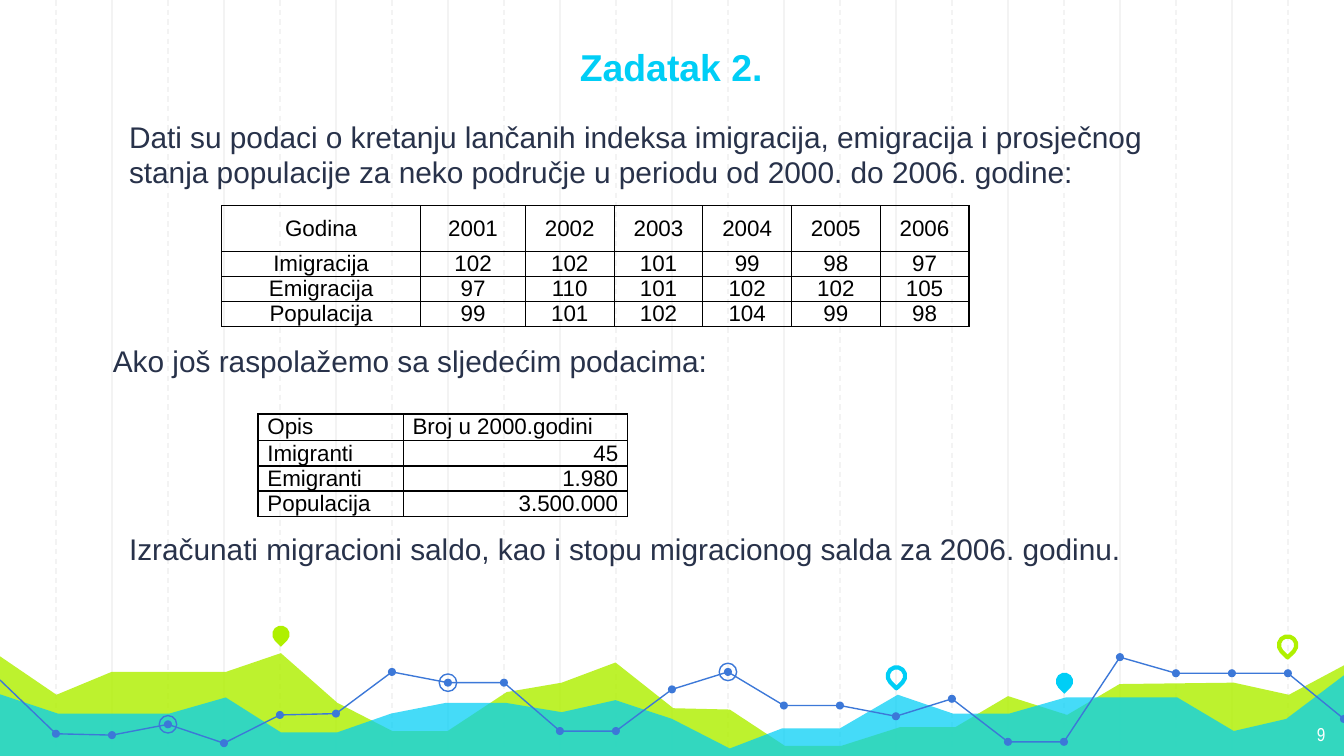
from lxml import etree
from pptx import Presentation
from pptx.dml.color import RGBColor
from pptx.enum import dml, shapes, text
from pptx.oxml import ns, parse_xml
from pptx.util import Inches, Pt

HUES = {"grid": "F3F3F3", "lime": "AFF000", "cyan": "00CEF6", "blue": "3C78D8",
        "ink": "28324A", "black": "000000", "white": "FFFFFF"}
LEFT, MID, RIGHT = text.PP_ALIGN.LEFT, text.PP_ALIGN.CENTER, text.PP_ALIGN.RIGHT
OVAL, DROP = shapes.MSO_SHAPE.OVAL, shapes.MSO_SHAPE.TEAR


def style(shape, fill=None, line=None, width=0.75):
    shape.shadow.inherit = False
    if fill:
        shape.fill.solid()
        shape.fill.fore_color.rgb = RGBColor.from_string(HUES[fill])
    else:
        shape.fill.background()
    if line:
        shape.line.color.rgb = RGBColor.from_string(HUES[line])
        shape.line.width = Pt(width)
    else:
        shape.line.fill.background()


def write(par, words, size, hue, align=LEFT, face="Arial", bold=False):
    par.text = words
    par.alignment = align
    font = par.font
    font.name, font.size, font.bold = face, Pt(size), bold
    font.color.rgb = RGBColor.from_string(HUES[hue])


# A 16:9 slide
prs = Presentation()
prs.slide_width = Inches(10)
prs.slide_height = Inches(10 * 9 / 16)
slide = prs.slides.add_slide(prs.slide_layouts[1])
draw = slide.shapes
step = 5 / 12

# Vertical grid: every other line is dashed
for i in range(1, 24):
    x = Inches(i * step)
    rule = draw.add_connector(shapes.MSO_CONNECTOR.STRAIGHT, x, 0, x, Inches(5.65))
    rule.line.color.rgb = RGBColor.from_string(HUES["grid"])
    rule.line.width = Pt(0.75)
    if i % 2:
        rule.line.dash_style = dml.MSO_LINE.DASH
    etree.SubElement(rule._element.spPr, ns.qn("a:effectLst"))

# Translucent areas
lime = [(-0.02, 4.87), (0.42, 5.17), (0.83, 5), (1.68, 5), (2.09, 4.86), (2.51, 5.23),
        (2.92, 5.44), (3.33, 5.44), (3.77, 5.15), (4.18, 5.08), (4.58, 4.93),
        (5.01, 5.27), (5.43, 5.28), (5.84, 5.55), (6.26, 5.55), (6.7, 5.41),
        (7.11, 5.41), (7.5, 5.18), (7.94, 5.32), (8.33, 5.09), (9.18, 5.08),
        (9.59, 5.17), (10.02, 4.94), (10.02, 5.64), (-0.03, 5.64)]
cyan = [(-0.02, 5.16), (0.43, 5.31), (1.26, 5.31), (1.68, 5.19), (2.09, 5.45),
        (2.51, 5.45), (2.91, 5.31), (3.32, 5.23), (3.76, 5.23), (4.18, 5.3),
        (4.58, 5.21), (5, 5.35), (5.43, 5.57), (5.82, 5.42), (6.25, 5.42),
        (6.68, 5.17), (7.09, 5.31), (7.51, 5.31), (7.93, 5.19), (8.76, 5.19),
        (9.18, 5.44), (9.57, 5.35), (10.02, 5.01), (10.02, 5.65), (-0.03, 5.65)]
# Heights of the blue line, one per grid step
highs = [5.06, 5.46, 5.47, 5.39, 5.53, 5.32, 5.31, 5, 5.08, 5.08, 5.44, 5.44, 5.13,
         5, 5.25, 5.25, 5.33, 5.2, 5.52, 5.52, 4.89, 5.01, 5.01, 5.01, 5.35]
track = [(i * step, y) for i, y in enumerate(highs)]

for dots, fill, alpha in [(lime, "lime", 82), (cyan, "cyan", 73), (track, None, None)]:
    spots = [(Inches(x), Inches(y)) for x, y in dots]
    pen = draw.build_freeform(*spots[0])
    pen.add_line_segments(spots[1:], close=bool(fill))
    form = pen.convert_to_shape()
    style(form, fill, None if fill else "blue")
    if fill:
        tint = form._element.spPr.find(".//" + ns.qn("a:srgbClr"))
        etree.SubElement(tint, ns.qn("a:alpha"), val=str(alpha * 1000))

# Dots, rings and pins: kind, centre, size, fill, line, line width
marks = [(OVAL, spot, 0.06, "blue", None, 0) for spot in track[1:]]
marks += [(OVAL, track[i], 0.13, None, "blue", 0.75) for i in (3, 8, 13)]
marks += [(DROP, (2.09, 4.72), 0.13, "lime", None, 0),
          (DROP, (6.67, 5.03), 0.13, None, "cyan", 2.25),
          (DROP, (7.92, 5.07), 0.13, "cyan", None, 0),
          (DROP, (9.58, 4.8), 0.13, None, "lime", 2.25)]
for kind, (x, y), size, fill, line, width in marks:
    mark = draw.add_shape(kind, Inches(x - size / 2), Inches(y - size / 2),
                          Inches(size), Inches(size))
    style(mark, fill, line, width)
    if kind == DROP:
        mark.rotation = 135

# Title, body and page number, in front of the art
title, body = draw.title, slide.placeholders[1]
page = draw.add_textbox(0, 0, 0, 0)
for box, spot, anchor in [
        (title, (1.17, -0.02, 7.65, 0.78), text.MSO_ANCHOR.BOTTOM),
        (body, (0.74, 0.78, 8.5, 3.61), text.MSO_ANCHOR.TOP),
        (page, (9.36, 5.28, 0.6, 0.35), text.MSO_ANCHOR.TOP)]:
    box.left, box.top, box.width, box.height = map(Inches, spot)
    frame = box.text_frame
    frame.word_wrap, frame.auto_size = True, text.MSO_AUTO_SIZE.NONE
    frame.vertical_anchor = anchor
    frame.margin_left = frame.margin_right = Inches(0.1)
    frame.margin_top = frame.margin_bottom = Inches(0.1)
    draw._spTree.append(box._element)
write(title.text_frame.paragraphs[0], "Zadatak 2.", 20, "cyan", MID, bold=True)
write(page.text_frame.paragraphs[0], "9", 10, "white", RIGHT, "Arial Narrow")

frame = body.text_frame
lines = [("Dati su podaci o kretanju lančanih indeksa imigracija, emigracija i prosječnog "
          "stanja populacije za neko područje u periodu od 2000. do 2006. godine:", 0.12, 0),
         ("Ako još raspolažemo sa sljedećim podacima:", 0, 81.8),
         ("Izračunati migracioni saldo, kao i stopu migracionog salda za 2006. godinu.",
          0.12, 81.8)]
for i, (words, inset, gap) in enumerate(lines):
    par = frame.add_paragraph() if i else frame.paragraphs[0]
    props = par._p.get_or_add_pPr()
    props.set("marL", str(Inches(inset)))
    props.set("indent", "0")
    etree.SubElement(props, ns.qn("a:buNone"))
    par.space_before, par.line_spacing = Pt(gap), 1.0
    write(par, words, 16, "ink")

# Tables: place, column widths, first row height, anchor, alignments, rows
index = [["Godina", "2001", "2002", "2003", "2004", "2005", "2006"],
         ["Imigracija", "102", "102", "101", "99", "98", "97"],
         ["Emigracija", "97", "110", "101", "102", "102", "105"],
         ["Populacija", "99", "101", "102", "104", "99", "98"]]
base = [["Opis", "Broj u 2000.godini"], ["Imigranti", "45"],
        ["Emigranti", "1.980"], ["Populacija", "3.500.000"]]
for x, y, cols, head, anchor, first, rest, rows in [
        (1.65, 1.53, [1.48, 0.78] + [0.66] * 5, 0.34, text.MSO_ANCHOR.MIDDLE,
         MID, MID, index),
        (1.92, 3.08, [1.08, 1.67], 0.2, text.MSO_ANCHOR.TOP, LEFT, RIGHT, base)]:
    tall = [head] + [0.17] * 3
    grid = draw.add_table(len(rows), len(cols), Inches(x), Inches(y),
                          Inches(sum(cols)), Inches(sum(tall))).table
    grid.first_row = grid.horz_banding = False
    for col, wide in zip(grid.columns, cols):
        col.width = Inches(wide)
    for r, row in enumerate(rows):
        grid.rows[r].height = Inches(tall[r])
        for c, words in enumerate(row):
            cell = grid.cell(r, c)
            cell.margin_left = cell.margin_right = Inches(0.07)
            cell.margin_top = cell.margin_bottom = 0
            cell.vertical_anchor = anchor
            cell.fill.background()
            align = rest if r and c else first
            write(cell.text_frame.paragraphs[0], words, 12, "black", align)
            for k, side in enumerate("LRTB"):
                cell._tc.tcPr.insert(k, parse_xml(
                    f'<a:ln{side} {ns.nsdecls("a")} w="{Pt(0.75)}"><a:solidFill>'
                    f'<a:srgbClr val="{HUES["black"]}"/></a:solidFill></a:ln{side}>'))

prs.save("out.pptx")
